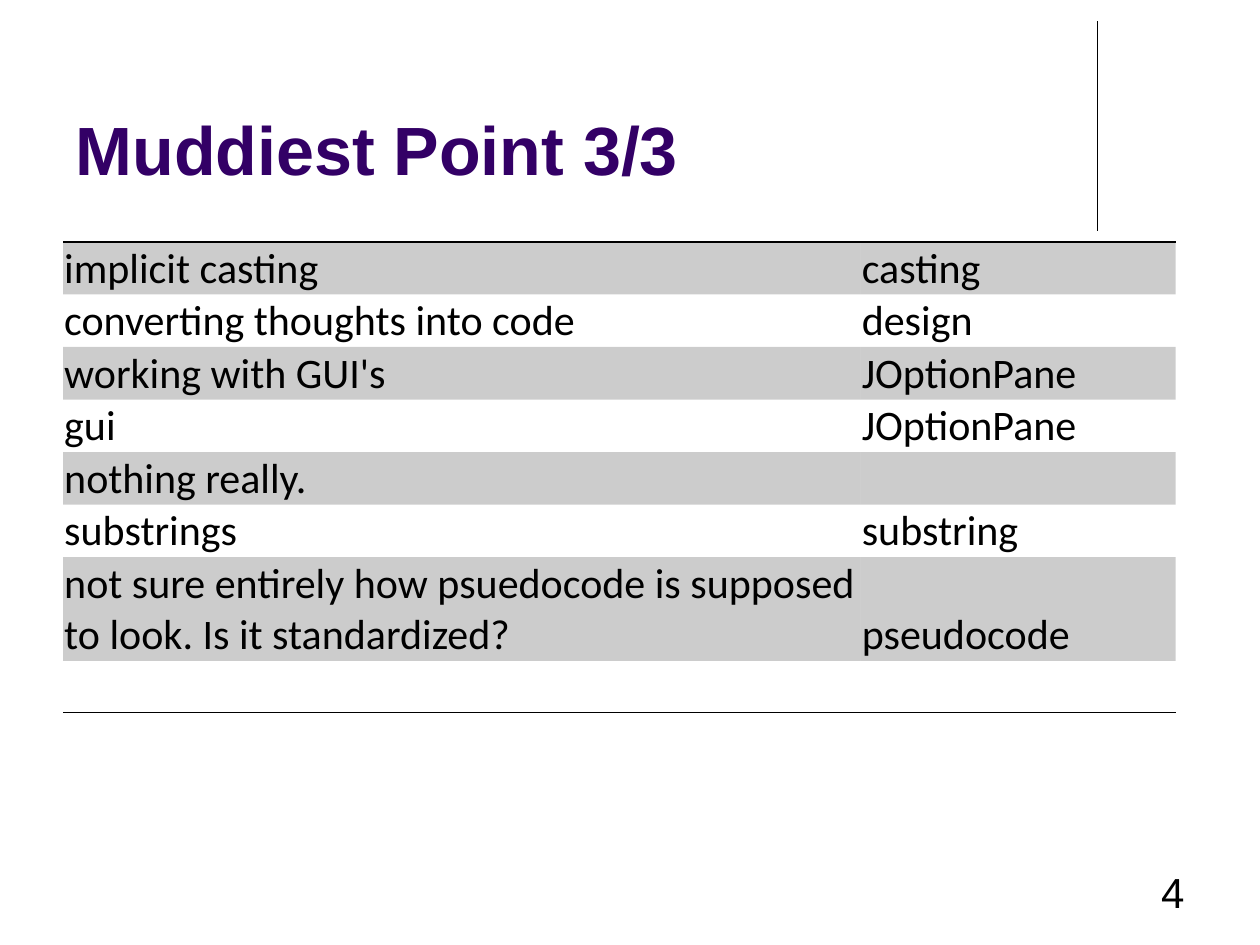
from lxml import etree
from pptx import Presentation
from pptx.dml.color import RGBColor
from pptx.enum.shapes import MSO_CONNECTOR
from pptx.enum.text import MSO_ANCHOR, PP_ALIGN
from pptx.oxml import parse_xml
from pptx.oxml.ns import nsdecls, qn
from pptx.util import Inches, Pt

TITLE = "Muddiest Point 3/3"
PAGE_NUMBER = "4"
ROWS = [
    ("implicit casting", "casting"),
    ("converting thoughts into code", "design"),
    ("working with GUI's", "JOptionPane"),
    ("gui", "JOptionPane"),
    ("nothing really.", ""),
    ("substrings", "substring"),
    ("not sure entirely how psuedocode is supposed to look. Is it standardized?",
     "pseudocode"),
    ("", ""),
]
COLUMN_WIDTHS = (6.33, 2.5)
LINE_HEIGHT = 0.41
TWO_LINE_ROW = 6
BAND_OPACITY = 20
NO_STYLE = "{2D5ABB26-0587-4C30-8999-92F81FD0307C}"

PURPLE = RGBColor(0x33, 0x00, 0x66)
BLACK = RGBColor(0x00, 0x00, 0x00)


def format_text(frame, font_name, size, color, bold=False):
    for paragraph in frame.paragraphs:
        for run in paragraph.runs:
            run.font.name = font_name
            run.font.size = Pt(size)
            run.font.bold = bold
            run.font.color.rgb = color


def add_rule(page):
    rule = page.shapes.add_connector(
        MSO_CONNECTOR.STRAIGHT, Inches(8.71), Inches(0.17), Inches(8.71), Inches(1.83))
    rule.line.color.rgb = BLACK
    rule.line.width = Pt(0.75)
    etree.SubElement(rule._element.spPr, qn("a:effectLst"))


def add_title(page):
    title = page.shapes.title
    title.left, title.top = Inches(0.5), Inches(0.13)
    title.width, title.height = Inches(8.25), Inches(1.42)
    title.text_frame.text = TITLE
    title.text_frame.vertical_anchor = MSO_ANCHOR.BOTTOM
    title.text_frame.paragraphs[0].alignment = PP_ALIGN.LEFT
    format_text(title.text_frame, "Arial", 39, PURPLE, bold=True)


def add_border(cell, side):
    """Draw a 1 pt black border; side is lnT or lnB."""
    border = parse_xml(
        f'<a:{side} {nsdecls("a")} w="{Pt(1)}"><a:solidFill>'
        f'<a:srgbClr val="{BLACK}"/></a:solidFill></a:{side}>')
    cell._tc.get_or_add_tcPr().insert(0, border)


def shade(cell):
    cell.fill.solid()
    cell.fill.fore_color.rgb = BLACK
    color = cell._tc.tcPr.find(qn("a:solidFill")).find(qn("a:srgbClr"))
    etree.SubElement(color, qn("a:alpha"), val=str(BAND_OPACITY * 1000))


def format_cell(cell, text, banded):
    cell.margin_left = cell.margin_right = cell.margin_top = Inches(0.01)
    cell.margin_bottom = 0
    cell.vertical_anchor = MSO_ANCHOR.BOTTOM
    cell.text_frame.text = text
    format_text(cell.text_frame, "Calibri", 24, BLACK)
    if banded:
        shade(cell)
    else:
        cell.fill.background()


def add_answers(page):
    frame = page.shapes.add_table(
        len(ROWS), len(COLUMN_WIDTHS), Inches(0.5), Inches(1.92),
        Inches(sum(COLUMN_WIDTHS)), Inches(LINE_HEIGHT * (len(ROWS) + 1)))
    table = frame.table
    table.first_row = table.horz_banding = False
    table._tbl.tblPr.find(qn("a:tableStyleId")).text = NO_STYLE
    for column, width in zip(table.columns, COLUMN_WIDTHS):
        column.width = Inches(width)
    for r, texts in enumerate(ROWS):
        lines = 2 if r == TWO_LINE_ROW else 1
        table.rows[r].height = Inches(LINE_HEIGHT * lines)
        for c, text in enumerate(texts):
            format_cell(table.cell(r, c), text, banded=r % 2 == 0)
    for c in range(len(COLUMN_WIDTHS)):
        add_border(table.cell(0, c), "lnT")
        add_border(table.cell(len(ROWS) - 1, c), "lnB")


def add_page_number(page):
    box = page.shapes.add_textbox(Inches(7.17), Inches(6.83), Inches(2.33), Inches(0.5))
    box.text_frame.word_wrap = True
    box.text_frame.text = PAGE_NUMBER
    box.text_frame.paragraphs[0].alignment = PP_ALIGN.RIGHT
    format_text(box.text_frame, "Arial", 24, BLACK)


def main():
    deck = Presentation()
    deck.slide_width, deck.slide_height = Inches(10), Inches(7.5)
    page = deck.slides.add_slide(deck.slide_layouts[5])
    add_rule(page)
    add_title(page)
    add_answers(page)
    add_page_number(page)
    deck.save("out.pptx")


if __name__ == "__main__":
    main()
